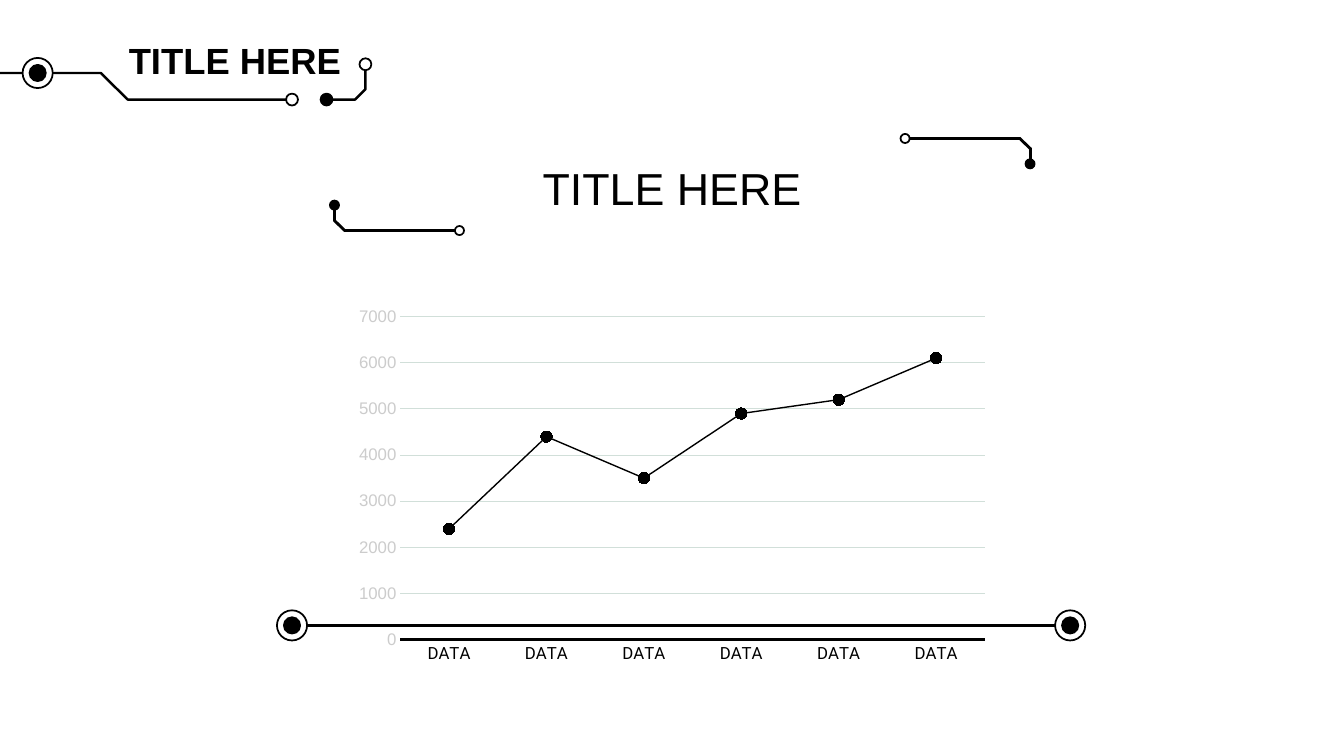
import math

import pptx
import pptx.chart.data
import pptx.dml.color
import pptx.enum.chart
import pptx.enum.shapes
import pptx.enum.text
import pptx.oxml
import pptx.oxml.ns
import pptx.util
from pptx.util import Cm, Pt

COLORS = {"ink": "000000", "paper": "FFFFFF", "scale": "CCCCCC", "grid": "D1DFD9"}
VALUES = [2400, 4400, 3500, 4900, 5200, 6100]
CHART_BOX = (8.71, 7.57, 16.46, 9.35)
PLOT_BOX = (10.09, 7.98, 14.73, 8.14)
DOT, SMALL_DOT = 0.3, 0.23
RING, CORE = 0.76, 0.41
BAR = 0.02


def rgb(name):
    return pptx.dml.color.RGBColor.from_string(COLORS[name])


def set_line(line, color, width):
    line.color.rgb = rgb(color)
    line.width = Pt(width)


def set_fill(fill, color):
    fill.solid()
    fill.fore_color.rgb = rgb(color)


def set_font(font, size, color="ink", name="Arial", bold=False):
    font.size, font.name, font.bold = Pt(size), name, bold
    font.color.rgb = rgb(color)


def add_centered(s, kind, center, w, h, fill, width):
    """Draw an outlined preset shape around a center given in centimetres."""
    x, y = center
    sp = s.shapes.add_shape(kind, Cm(x - w / 2), Cm(y - h / 2), Cm(w), Cm(h))
    sp.shadow.inherit = False
    set_fill(sp.fill, fill)
    set_line(sp.line, "ink", width)
    return sp


def add_dot(s, center, diameter, fill):
    oval = pptx.enum.shapes.MSO_SHAPE.OVAL
    add_centered(s, oval, center, diameter, diameter, fill, 1.25)


def add_node(s, center):
    """Draw a ring with a solid core."""
    add_dot(s, center, RING, "paper")
    add_dot(s, center, CORE, "ink")


def add_trace(s, points):
    """Draw an open polyline through points given in centimetres."""
    corners = [(Cm(x), Cm(y)) for x, y in points]
    builder = s.shapes.build_freeform(*corners[0])
    builder.add_line_segments(corners[1:], close=False)
    sp = builder.convert_to_shape()
    sp.shadow.inherit = False
    sp.fill.background()
    set_line(sp.line, "ink", 1.75)


def add_bars(s, points):
    """Draw one thin turned bar for each segment between the points."""
    for (x1, y1), (x2, y2) in zip(points, points[1:]):
        center = ((x1 + x2) / 2, (y1 + y2) / 2)
        length = math.hypot(x2 - x1, y2 - y1)
        sp = add_centered(s, pptx.enum.shapes.MSO_SHAPE.RECTANGLE,
                          center, length, BAR, "ink", 1.5)
        sp.rotation = round(math.degrees(math.atan2(y2 - y1, x2 - x1))) % 180


def add_circuit(s, points, diameter, add_path):
    """Draw a path from a solid dot to an open dot."""
    add_path(s, points)
    add_dot(s, points[0], diameter, "ink")
    add_dot(s, points[-1], diameter, "paper")


def add_title(s, text, box, size, bold=False):
    tf = s.shapes.add_textbox(*map(Cm, box)).text_frame
    tf.word_wrap = True
    tf.auto_size = pptx.enum.text.MSO_AUTO_SIZE.SHAPE_TO_FIT_TEXT
    p = tf.paragraphs[0]
    p.alignment = pptx.enum.text.PP_ALIGN.CENTER
    r = p.add_run()
    r.text = text
    set_font(r.font, size, bold=bold)


def set_plot_area(chart):
    """Fix the inner plot area at PLOT_BOX."""
    left, top, width, height = CHART_BOX
    x, y, w, h = PLOT_BOX
    parts = ((x - left) / width, (y - top) / height, w / width, h / height)
    plot_area = chart.plots[0]._element.getparent()
    for old in plot_area.findall(pptx.oxml.ns.qn("c:layout")):
        plot_area.remove(old)
    sizes = "".join(f'<c:{tag} val="{val}"/>' for tag, val in zip("xywh", parts))
    plot_area.insert(0, pptx.oxml.parse_xml(
        f'<c:layout {pptx.oxml.ns.nsdecls("c")}><c:manualLayout>'
        '<c:layoutTarget val="inner"/><c:xMode val="edge"/><c:yMode val="edge"/>'
        f'{sizes}</c:manualLayout></c:layout>'))


def add_line_chart(s):
    data = pptx.chart.data.CategoryChartData()
    data.categories = ["DATA"] * len(VALUES)
    data.add_series("Series 1", VALUES)
    chart = s.shapes.add_chart(
        pptx.enum.chart.XL_CHART_TYPE.LINE_MARKERS, *map(Cm, CHART_BOX), data).chart
    chart.has_legend = chart.has_title = False
    set_font(chart.font, 10)
    set_plot_area(chart)

    plot = chart.plots[0]
    plot.vary_by_categories = False
    series = plot.series[0]
    series.smooth = False
    set_line(series.format.line, "ink", 1)
    series.marker.style = pptx.enum.chart.XL_MARKER_STYLE.CIRCLE
    series.marker.size = 8
    set_fill(series.marker.format.fill, "ink")
    set_line(series.marker.format.line, "ink", 0.75)

    labels, scale = chart.category_axis, chart.value_axis
    for axis in (labels, scale):
        axis.major_tick_mark = axis.minor_tick_mark = pptx.enum.chart.XL_TICK_MARK.NONE
    set_font(labels.tick_labels.font, 12, name="Roboto")
    set_line(labels.format.line, "ink", 2)
    set_font(scale.tick_labels.font, 12, "scale")
    scale.format.line.fill.background()
    scale.minimum_scale, scale.maximum_scale, scale.major_unit = 0, 7000, 1000
    set_line(scale.major_gridlines.format.line, "grid", 0.75)


def add_header(s):
    add_trace(s, [(-0.05, 1.84), (2.54, 1.84), (3.22, 2.51), (7.21, 2.51)])
    add_node(s, (0.95, 1.84))
    add_dot(s, (7.36, 2.51), DOT, "paper")
    add_title(s, "TITLE HERE", (2.8, 0.84, 6.25, 1.37), 26, bold=True)
    add_circuit(s, [(8.23, 2.51), (8.95, 2.51), (9.21, 2.25), (9.21, 1.62)],
                DOT, add_trace)


def add_title_frame(s):
    """Draw the circuit left of the title and its point reflection on the right."""
    left = [(8.43, 5.17), (8.43, 5.56), (8.69, 5.81), (11.58, 5.81)]
    right = [(34.39 - x, 9.3 - y) for x, y in left]
    for points in (left, right):
        add_circuit(s, points, SMALL_DOT, add_bars)


def add_base_line(s, left, right, y):
    line = s.shapes.add_connector(
        pptx.enum.shapes.MSO_CONNECTOR.STRAIGHT, Cm(left), Cm(y), Cm(right), Cm(y))
    set_line(line.line, "ink", 2)
    line._element.spPr.append(pptx.oxml.parse_xml(
        f'<a:effectLst {pptx.oxml.ns.nsdecls("a")}/>'))
    for x in (left, right):
        add_node(s, (x, y))


def main():
    prs = pptx.Presentation()
    prs.slide_width, prs.slide_height = Cm(33.87), Cm(19.05)
    s = prs.slides.add_slide(prs.slide_layouts[6])
    set_fill(s.background.fill, "paper")
    add_line_chart(s)
    add_header(s)
    add_title_frame(s)
    add_title(s, "TITLE HERE", (9.51, 3.92, 14.86, 1.63), 32)
    add_base_line(s, 7.36, 26.97, 15.76)
    prs.save("out.pptx")


if __name__ == "__main__":
    main()
